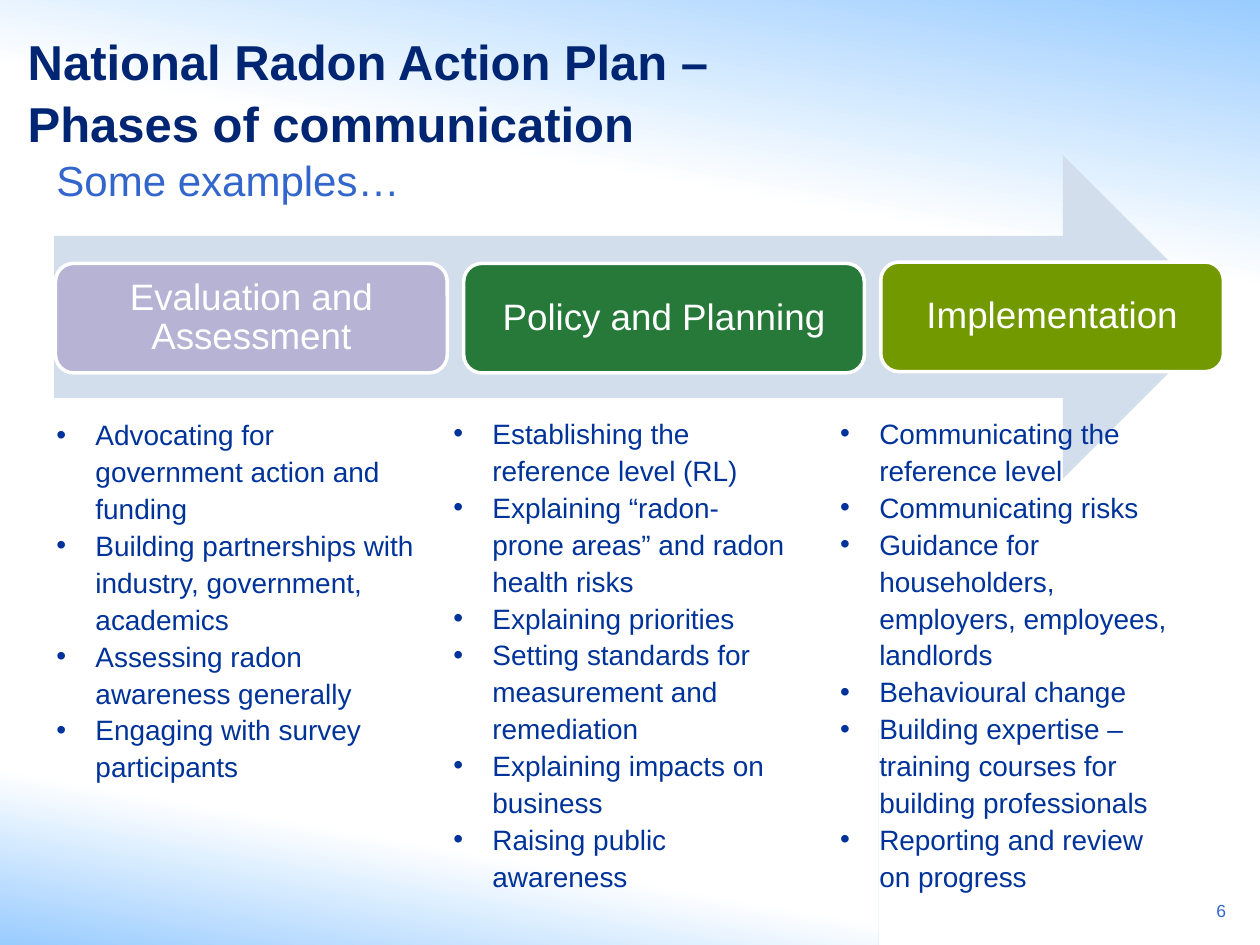
from dataclasses import dataclass

from lxml.etree import SubElement
from pptx import Presentation
from pptx.dml.color import RGBColor
from pptx.enum.shapes import MSO_SHAPE as Shape
from pptx.enum.text import MSO_ANCHOR as Anchor, PP_ALIGN as Align
from pptx.oxml.ns import qn
from pptx.util import Inches, Pt


@dataclass(frozen=True)
class Theme:
    font: str = "Arial"
    title: str = "002673"
    accent: str = "3366CC"
    body: str = "003399"
    white: str = "FFFFFF"
    sky: str = "99CCFF"
    arrow: str = "D3DEEC"
    title_size: int = 28
    subtitle_size: int = 24
    phase_size: int = 21
    body_size: int = 16
    number_size: int = 10


THEME = Theme()

# Label, fill, and left, top, width, height of each phase
PHASES = [
    ("Evaluation and Assessment", "B6B3D4", (0.44, 2.09, 3.11, 0.87)),
    ("Policy and Planning", "267939", (3.68, 2.09, 3.18, 0.87)),
    ("Implementation", "739900", (6.99, 2.08, 2.72, 0.87)),
]

# Place and bullets of each column of examples
EXAMPLES = [
    ((0.35, 3.24, 3.04, 3.06), [
        "Advocating for government action and funding",
        "Building partnerships with industry, government, academics",
        "Assessing radon awareness generally",
        "Engaging with survey participants",
    ]),
    ((3.5, 3.23, 2.85, 3.95), [
        "Establishing the reference level (RL)",
        "Explaining “radon- prone areas” and radon health risks",
        "Explaining priorities",
        "Setting standards for measurement and remediation",
        "Explaining impacts on business",
        "Raising public awareness",
    ]),
    ((6.57, 3.23, 2.85, 3.95), [
        "Communicating the reference level",
        "Communicating risks",
        "Guidance for householders, employers, employees, landlords",
        "Behavioural change",
        "Building expertise – training courses for building professionals",
        "Reporting and review on progress",
    ]),
]


def rgb(value):
    return RGBColor.from_string(value)


def inches(place):
    return [Inches(value) for value in place]


def add_bullet(para, indent=0.31):
    props = para._p.get_or_add_pPr()
    props.set("marL", str(Inches(indent)))
    props.set("indent", str(-Inches(indent)))
    SubElement(props, qn("a:buFont"), typeface=THEME.font)
    SubElement(props, qn("a:buChar"), char="•")


def write(frame, lines, size, color, bold=False, align=Align.LEFT,
          anchor=Anchor.TOP, spacing=None, bullets=False):
    """Fill a text frame with one paragraph for each line."""
    frame.word_wrap = True
    frame.vertical_anchor = anchor
    for index, line in enumerate(lines):
        para = frame.add_paragraph() if index else frame.paragraphs[0]
        para.text = line
        para.alignment = align
        if spacing:
            para.line_spacing = spacing
        if bullets:
            add_bullet(para)
        for span in para.runs:
            span.font.name = THEME.font
            span.font.size = Pt(size)
            span.font.bold = bold
            span.font.color.rgb = rgb(color)


def add_text(page, place, lines, size, color, **style):
    box = page.shapes.add_textbox(*inches(place))
    write(box.text_frame, lines, size, color, **style)


def add_block(page, kind, place, fill=None):
    block = page.shapes.add_shape(kind, *inches(place))
    block.shadow.inherit = False
    block.line.fill.background()
    if fill:
        block.fill.solid()
        block.fill.fore_color.rgb = rgb(fill)
    return block


def add_glow(page, place, angle, reach):
    """Place a sky-to-white gradient behind everything else."""
    glow = add_block(page, Shape.RECTANGLE, place)
    glow.fill.gradient()
    glow.fill.gradient_angle = angle
    stops = zip(glow.fill.gradient_stops, (THEME.sky, THEME.white), (0, reach))
    for stop, color, position in stops:
        stop.color.rgb = rgb(color)
        stop.position = position
    page.shapes._spTree.insert(2, glow._element)


def add_title(page, text):
    title = page.shapes.title
    title.left, title.top, title.width, title.height = inches(
        (0.12, 0.09, 9.07, 1.25))
    write(title.text_frame, [text], THEME.title_size, THEME.title,
          bold=True, anchor=Anchor.MIDDLE, spacing=1.05)


def add_phase(page, label, fill, place):
    phase = add_block(page, Shape.ROUNDED_RECTANGLE, place, fill)
    phase.line.color.rgb = rgb(THEME.white)
    phase.line.width = Pt(2)
    frame = phase.text_frame
    frame.margin_left = frame.margin_right = Inches(0.09)
    frame.margin_top = frame.margin_bottom = Inches(0.09)
    write(frame, [label], THEME.phase_size, THEME.white,
          align=Align.CENTER, anchor=Anchor.MIDDLE, spacing=0.9)


def main():
    deck = Presentation()
    deck.slide_width, deck.slide_height = Inches(10), Inches(7.5)
    page = deck.slides.add_slide(deck.slide_layouts.get_by_name("Title Only"))

    add_glow(page, (0, 0, 10, 2.33), angle=260, reach=0.56)
    add_glow(page, (0, 5.8, 6.97, 1.7), angle=80, reach=0.48)
    add_title(page, "National Radon Action Plan –\vPhases of communication")
    add_text(page, (9.27, 7.09, 0.56, 0.32), ["6"],
             THEME.number_size, THEME.accent, align=Align.RIGHT)

    add_block(page, Shape.RIGHT_ARROW, (0.43, 1.23, 9.29, 2.57), THEME.arrow)
    for label, fill, place in PHASES:
        add_phase(page, label, fill, place)
    for place, lines in EXAMPLES:
        add_text(page, place, lines, THEME.body_size, THEME.body,
                 spacing=1.1, bullets=True)
    add_text(page, (0.35, 1.18, 8.43, 0.63), ["Some examples…"],
             THEME.subtitle_size, THEME.accent)

    deck.save("out.pptx")


if __name__ == "__main__":
    main()
